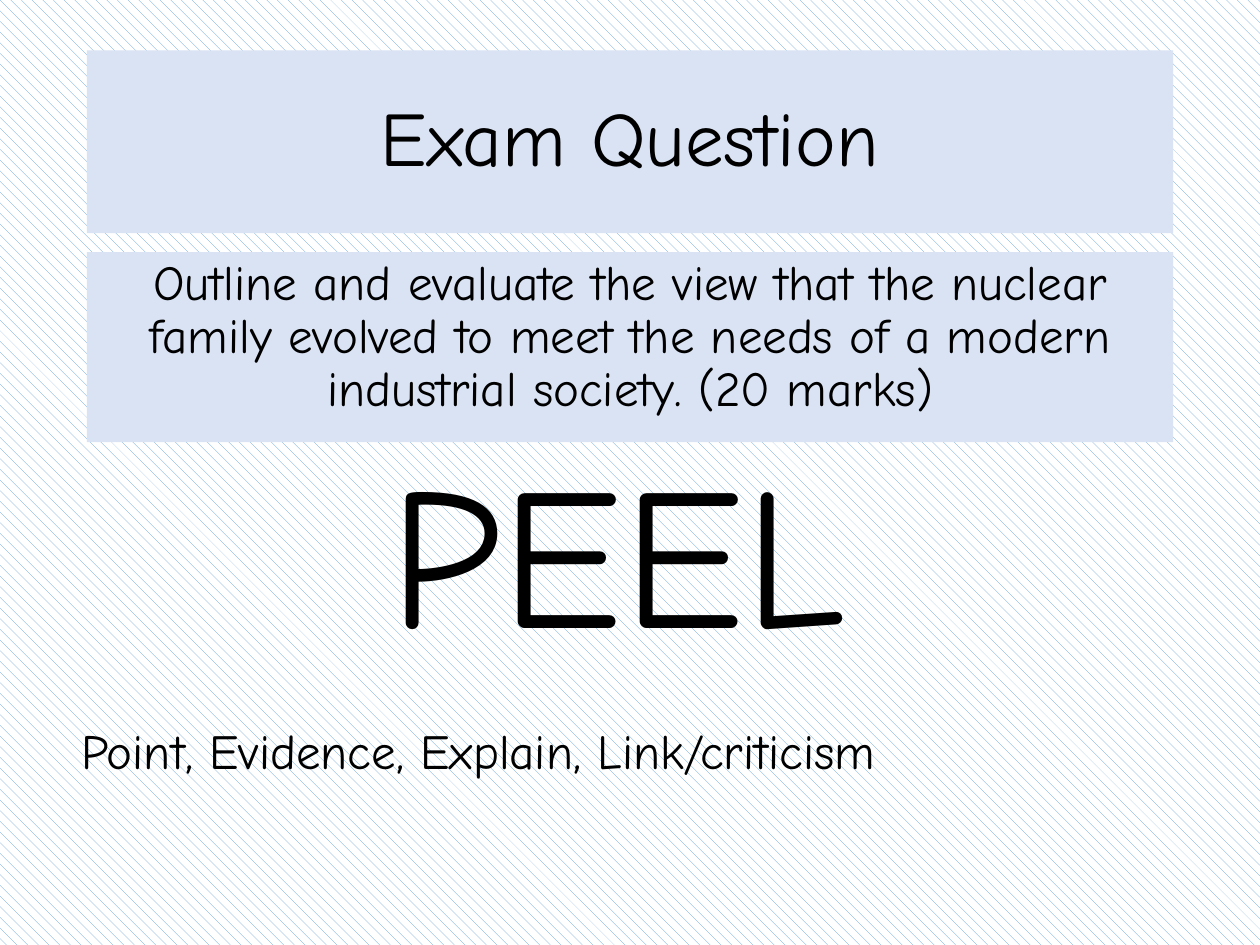
from pptx import Presentation
from pptx.dml.color import RGBColor
from pptx.enum.dml import MSO_PATTERN
from pptx.enum.shapes import MSO_SHAPE
from pptx.enum.text import MSO_ANCHOR, MSO_AUTO_SIZE, PP_ALIGN
from pptx.util import Inches, Pt

FONT = "Comic Neue"
BLACK = RGBColor(0x00, 0x00, 0x00)
WHITE = RGBColor(0xFF, 0xFF, 0xFF)
STRIPE_BLUE = RGBColor(0x5B, 0x9B, 0xD5)
PANEL_BLUE = RGBColor(0xDA, 0xE3, 0xF3)
PANEL_LEFT, PANEL_WIDTH = 0.69, 8.62


def set_striped_background(slide):
    fill = slide.background.fill
    fill.patterned()
    fill.pattern = MSO_PATTERN.DASHED_DOWNWARD_DIAGONAL
    fill.fore_color.rgb = STRIPE_BLUE
    fill.back_color.rgb = WHITE


def write_text(frame, text, size, align=PP_ALIGN.LEFT, anchor=MSO_ANCHOR.TOP,
               line_spacing=None, space_before=0, wrap=True):
    frame.word_wrap = wrap
    frame.vertical_anchor = anchor
    paragraph = frame.paragraphs[0]
    paragraph.alignment = align
    paragraph.line_spacing = line_spacing
    paragraph.space_before = Pt(space_before)
    run = paragraph.add_run()
    run.text = text
    run.font.name = FONT
    run.font.size = Pt(size)
    run.font.color.rgb = BLACK


def add_panel(slide, top, height, text, size, **text_format):
    panel = slide.shapes.add_shape(
        MSO_SHAPE.RECTANGLE, Inches(PANEL_LEFT), Inches(top),
        Inches(PANEL_WIDTH), Inches(height))
    panel.shadow.inherit = False
    panel.fill.solid()
    panel.fill.fore_color.rgb = PANEL_BLUE
    panel.line.fill.background()
    write_text(panel.text_frame, text, size, align=PP_ALIGN.CENTER,
               line_spacing=0.9, **text_format)


def add_label(slide, left, top, width, height, text, size):
    label = slide.shapes.add_textbox(
        Inches(left), Inches(top), Inches(width), Inches(height))
    write_text(label.text_frame, text, size, wrap=False)
    label.text_frame.auto_size = MSO_AUTO_SIZE.SHAPE_TO_FIT_TEXT


def main():
    presentation = Presentation()
    presentation.slide_width = Inches(10)
    presentation.slide_height = Inches(7.5)
    slide = presentation.slides.add_slide(presentation.slide_layouts[6])

    set_striped_background(slide)
    add_panel(slide, 0.4, 1.45, "Exam Question", 44, anchor=MSO_ANCHOR.MIDDLE)
    add_panel(slide, 2, 1.51,
              "Outline and evaluate the view that the nuclear family evolved "
              "to meet the needs of a modern industrial society. (20 marks)",
              28, space_before=10)
    add_label(slide, 2.99, 3.34, 4.03, 2.04, "PEEL", 115)
    add_label(slide, 0.55, 5.67, 7.27, 0.57,
              "Point, Evidence, Explain, Link/criticism", 28)

    presentation.save("out.pptx")


if __name__ == "__main__":
    main()
